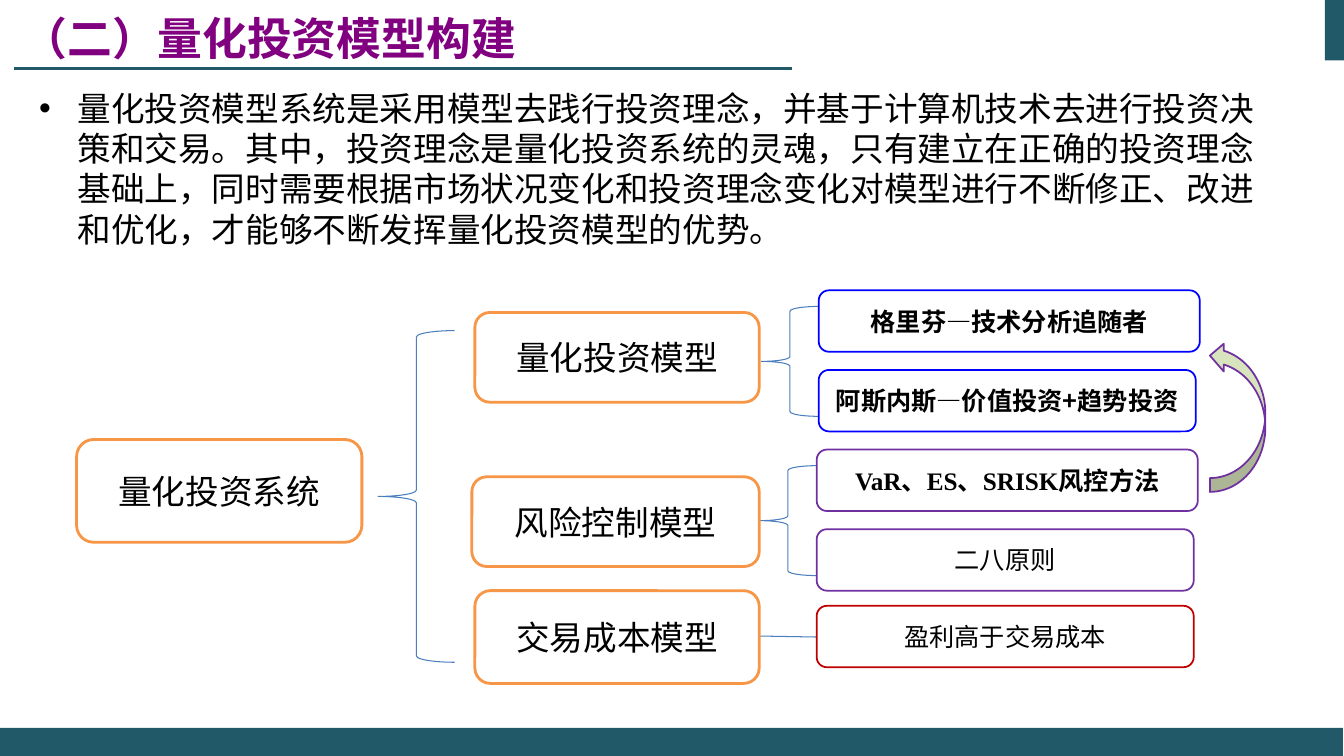
"""Build the slide on constructing a quantitative investment model."""
from lxml import etree
from pptx import Presentation
from pptx.dml.color import RGBColor
from pptx.enum.shapes import MSO_CONNECTOR as CONN, MSO_SHAPE as SHAPE
from pptx.enum.text import MSO_ANCHOR as ANCHOR, PP_ALIGN as ALIGN
from pptx.oxml.ns import qn
from pptx.util import Inches, Pt

TEAL = RGBColor(0x21, 0x59, 0x68)
ORANGE = RGBColor(0xF7, 0x96, 0x46)
BLUE = RGBColor(0x00, 0x00, 0xFF)
STEEL = RGBColor(0x4B, 0x7E, 0xBC)
VIOLET = RGBColor(0x70, 0x30, 0xA0)
RED = RGBColor(0xC0, 0x00, 0x00)
GREEN = RGBColor(0xD7, 0xE4, 0xBD)
PURPLE = RGBColor(0x80, 0x00, 0x80)
BLACK = RGBColor(0x00, 0x00, 0x00)
WHITE = RGBColor(0xFF, 0xFF, 0xFF)
CJK = "Noto Sans CJK SC"

prs = Presentation()
prs.slide_width, prs.slide_height = Inches(13.33), Inches(7.5)
s = prs.slides.add_slide(prs.slide_layouts[6])


def add_shape(kind, box, fill=None, line=None, width=1.25):
    sp = s.shapes.add_shape(kind, *[Inches(v) for v in box])
    sp.shadow.inherit = False
    if fill is None:
        sp.fill.background()
    else:
        sp.fill.solid()
        sp.fill.fore_color.rgb = fill
    if line is None:
        sp.line.fill.background()
    else:
        sp.line.color.rgb = line
        sp.line.width = Pt(width)
    return sp


def add_run(p, text, size, font, bold=False, color=BLACK):
    r = p.add_run()
    r.text = text
    r.font.size, r.font.bold, r.font.name = Pt(size), bold, font
    r.font.color.rgb = color
    ea = etree.SubElement(r.font._element, qn("a:ea"))
    ea.set("typeface", CJK)


for box in [(13.14, 0, 0.2, 0.6), (0, 7.22, 13.32, 0.28)]:
    add_shape(SHAPE.RECTANGLE, box, TEAL)

lines = [(7.86, 0.68, 0.14, 0.68, TEAL, 1.5), (7.53, 6.31, 8.1, 6.32, STEEL, 0.75)]
for x1, y1, x2, y2, color, width in lines:
    cx = s.shapes.add_connector(CONN.STRAIGHT, Inches(x1), Inches(y1), Inches(x2), Inches(y2))
    cx.line.color.rgb = color
    cx.line.width = Pt(width)
    etree.SubElement(cx._element.spPr, qn("a:effectLst"))

for box in [(3.75, 3.28, 0.76, 3.29), (7.55, 3.04, 0.57, 1.09), (7.53, 4.62, 0.57, 1.09)]:
    add_shape(SHAPE.LEFT_BRACE, box, line=STEEL, width=0.75)

models = [
    ((0.76, 4.36, 2.83, 1.02), "量化投资系统"),
    ((4.71, 3.1, 2.82, 0.89), "量化投资模型"),
    ((4.68, 4.73, 2.85, 0.89), "风险控制模型"),
    ((4.71, 5.86, 2.82, 0.92), "交易成本模型"),
]
details = [
    ((8.12, 2.88, 3.78, 0.61), BLUE, [("格里芬—技术分析追随者", CJK, True)]),
    ((8.12, 3.67, 3.74, 0.61), BLUE, [("阿斯内斯—价值投资+趋势投资", CJK, True)]),
    ((8.1, 4.46, 3.78, 0.61), VIOLET,
     [("VaR、ES、SRISK", "Times New Roman", True), ("风控方法", CJK, True)]),
    ((8.1, 5.25, 3.74, 0.61), VIOLET, [("二八原则", "Calibri", False)]),
    ((8.1, 6.01, 3.74, 0.61), RED, [("盈利高于交易成本", "Calibri", False)]),
]
nodes = [(box, ORANGE, 2, 24, [(text, "Calibri", False)]) for box, text in models]
nodes += [(box, line, 1.25, 18, runs) for box, line, runs in details]
for box, line, width, size, runs in nodes:
    sp = add_shape(SHAPE.ROUNDED_RECTANGLE, box, WHITE, line, width)
    tf = sp.text_frame
    tf.word_wrap = True
    tf.vertical_anchor = ANCHOR.MIDDLE
    p = tf.paragraphs[0]
    p.alignment = ALIGN.CENTER
    for text, font, bold in runs:
        add_run(p, text, size, font, bold)

arrow = add_shape(SHAPE.CURVED_LEFT_ARROW, (12, 3.39, 0.55, 1.49), GREEN, VIOLET)
arrow._element.spPr.find(qn("a:xfrm")).set("flipV", "1")

tf = s.shapes.add_textbox(Inches(0.29), Inches(0.82), Inches(12.36), Inches(1.72)).text_frame
tf.word_wrap = True
p = tf.paragraphs[0]
pPr = p._p.get_or_add_pPr()
pPr.set("marL", str(Inches(0.38)))
pPr.set("indent", str(Inches(-0.38)))
etree.SubElement(pPr, qn("a:buFont")).set("typeface", "Arial")
etree.SubElement(pPr, qn("a:buChar")).set("char", "•")
add_run(p, "量化投资模型系统是采用模型去践行投资理念，并基于计算机技术去进行投资决策和交易。"
        "其中，投资理念是量化投资系统的灵魂，只有建立在正确的投资理念基础上，"
        "同时需要根据市场状况变化和投资理念变化对模型进行不断修正、改进和优化，"
        "才能够不断发挥量化投资模型的优势。", 24, "Arial")

tf = s.shapes.add_textbox(Inches(0.13), Inches(-0.02), Inches(12), Inches(0.78)).text_frame
tf.word_wrap = True
tf.vertical_anchor = ANCHOR.MIDDLE
add_run(tf.paragraphs[0], "（二）量化投资模型构建", 32, CJK, True, PURPLE)

prs.save("out.pptx")
